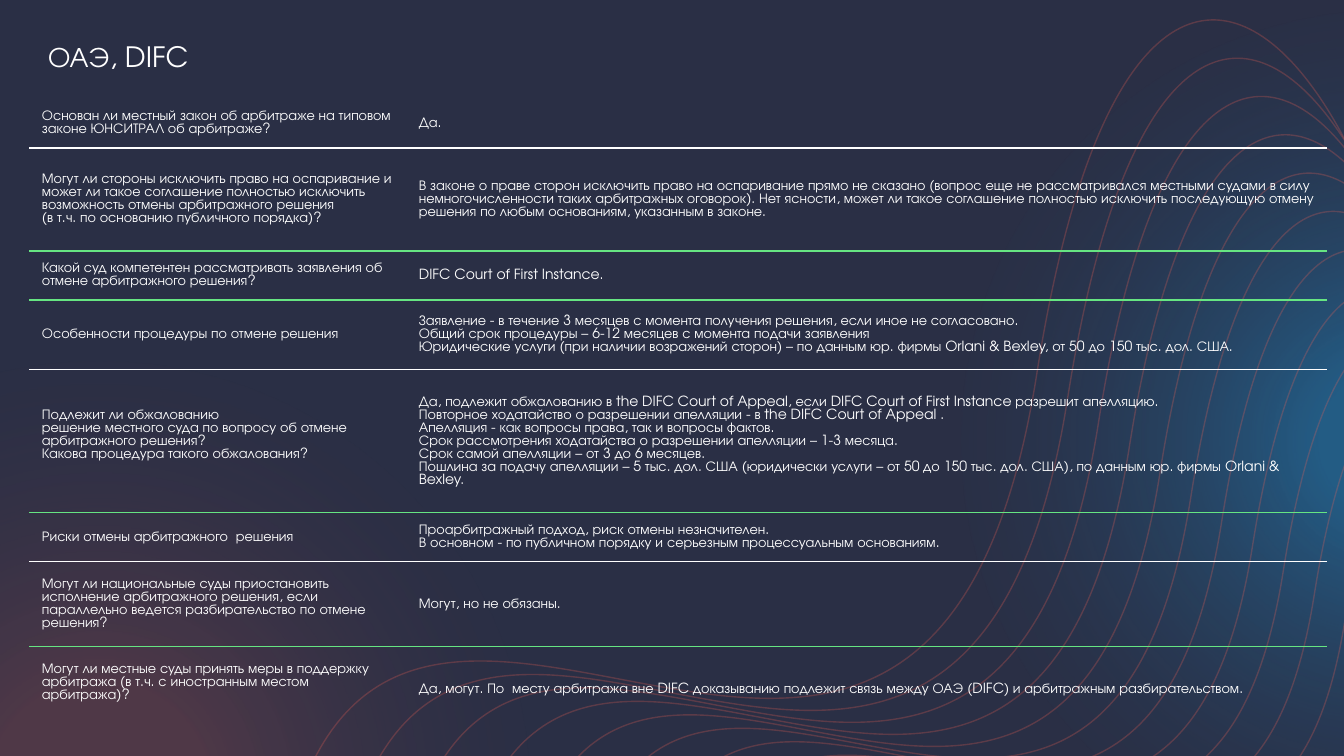
from dataclasses import dataclass

from lxml import etree
from pptx import Presentation
from pptx.dml.color import RGBColor
from pptx.enum.shapes import MSO_SHAPE
from pptx.enum.text import MSO_ANCHOR, PP_ALIGN
from pptx.oxml import parse_xml
from pptx.oxml.ns import nsdecls, qn
from pptx.slide import Slide
from pptx.util import Emu, Pt

ELLIPSE = MSO_SHAPE.OVAL
MIDDLE = MSO_ANCHOR.MIDDLE
LEFT = PP_ALIGN.LEFT

FONT = "TeX Gyre Adventor"
NAVY = RGBColor(0x2A, 0x2F, 0x45)
BLUE = RGBColor(0x1B, 0x94, 0xD5)
CORAL = RGBColor(0xFF, 0x64, 0x55)
GREEN = RGBColor(0x66, 0xE5, 0x82)
WHITE = RGBColor(0xFF, 0xFF, 0xFF)

WIDTH, HEIGHT = 1344, 756
EMU_PER_PX = 914400 / 100.8
NO_GRID_STYLE = "{2D5ABB26-0587-4C30-8999-92F81FD0307C}"

Point = tuple[float, float]


@dataclass
class Glow:
    left: int
    top: int
    color: RGBColor
    core: int  # percent of the radius in the full colour
    opacity: int  # percent


@dataclass
class Row:
    height: int
    question: list[str]
    answer: list[str]
    divider: RGBColor | None
    lift: int = 0  # extra bottom margin of the question


GLOW_SIZE = 860
GLOWS = [Glow(962, 11, BLUE, 12, 44), Glow(-331, 362, CORAL, 18, 17)]

# Closed outlines of four Bezier segments, blended from the inner to the outer
WAVE_COUNT = 17
INNER_WAVE: list[Point] = [
    (1530, 767), (1571, 512), (1686, 659), (1690, 887), (1693, 1115), (1637, 1243), (1464, 1226),
    (1387, 1218), (1200, 1090), (1248, 933), (1296, 777), (1490, 1022), (1530, 767)]
OUTER_WAVE: list[Point] = [
    (1037, 373), (1143, -298), (1450, 89), (1459, 689), (1468, 1290), (1318, 1627), (863, 1582),
    (659, 1560), (166, 1221), (294, 810), (422, 399), (932, 1044), (1037, 373)]

COLUMNS = [377, 921]
ROWS = [
    Row(49, ["Основан ли местный закон об арбитраже на типовом законе ЮНСИТРАЛ об арбитраже?"],
        ["Да."], WHITE),
    Row(103, ["Могут ли стороны исключить право на оспаривание и может ли такое соглашение "
              "полностью исключить возможность отмены арбитражного решения",
              "(в т.ч. по основанию публичного порядка)?"],
        ["В законе о праве сторон исключить право на оспаривание прямо не сказано (вопрос еще не "
         "рассматривался местными судами в силу немногочисленности таких арбитражных оговорок). "
         "Нет ясности, может ли такое соглашение полностью исключить последующую отмену решения "
         "по любым основаниям, указанным в законе."], GREEN),
    Row(49, ["Какой суд компетентен рассматривать заявления об отмене арбитражного решения?"],
        ["DIFC Court of First Instance."], GREEN),
    Row(70, ["Особенности процедуры по отмене решения"],
        ["Заявление - в течение 3 месяцев с момента получения решения, если иное не согласовано.",
         "Общий срок процедуры – 6-12 месяцев с момента подачи заявления",
         "Юридические услуги (при наличии возражений сторон) – по данным юр. фирмы "
         "Orlani & Bexley, от 50 до 150 тыс. дол. США."], WHITE),
    Row(143, ["Подлежит ли обжалованию",
              "решение местного суда по вопросу об отмене арбитражного решения?",
              "Какова процедура такого обжалования?"],
        ["Да, подлежит обжалованию в the DIFC Court of Appeal, если DIFC Court of First Instance "
         "разрешит апелляцию.",
         "Повторное ходатайство о разрешении апелляции - в the DIFC Court of Appeal .",
         "Апелляция - как вопросы права, так и вопросы фактов.",
         "Срок рассмотрения ходатайства о разрешении апелляции – 1-3 месяца.",
         "Срок самой апелляции – от 3 до 6 месяцев.",
         "Пошлина за подачу апелляции – 5 тыс. дол. США (юридически услуги – от 50 до 150 тыс. "
         "дол. США), по данным юр. фирмы Orlani & Bexley."], GREEN, lift=13),
    Row(49, ["Риски отмены арбитражного  решения"],
        ["Проарбитражный подход, риск отмены незначителен.",
         "В основном - по публичном порядку и серьезным процессуальным основаниям."], WHITE),
    Row(85, ["Могут ли национальные суды приостановить исполнение арбитражного решения, если "
             "параллельно ведется разбирательство по отмене решения?"],
        ["Могут, но не обязаны."], GREEN),
    Row(85, ["Могут ли местные суды принять меры в поддержку арбитража (в т.ч. с иностранным "
             "местом арбитража)?"],
        ["Да, могут. По  месту арбитража вне DIFC доказыванию подлежит связь между ОАЭ (DIFC) "
         "и арбитражным разбирательством."], None, lift=13),
]


def px(value: float) -> Emu:
    return Emu(round(value * EMU_PER_PX))


def add_glow(slide: Slide, glow: Glow) -> None:
    sp = slide.shapes.add_shape(ELLIPSE, px(glow.left), px(glow.top), px(GLOW_SIZE), px(GLOW_SIZE))
    sp.shadow.inherit = False
    sp.line.fill.background()
    sp.element.spPr.find(qn("a:prstGeom")).addnext(parse_xml(
        f'<a:gradFill {nsdecls("a")}><a:gsLst>'
        f'<a:gs pos="{glow.core * 1000}"><a:srgbClr val="{glow.color}">'
        f'<a:alpha val="{glow.opacity * 1000}"/></a:srgbClr></a:gs>'
        f'<a:gs pos="81000"><a:srgbClr val="{NAVY}"><a:alpha val="0"/></a:srgbClr></a:gs></a:gsLst>'
        '<a:path path="circle"><a:fillToRect l="50000" t="50000" r="50000" b="50000"/></a:path>'
        '</a:gradFill>'))


def bezier(a: Point, b: Point, c: Point, d: Point, t: float) -> Point:
    u = 1 - t
    weights = (u ** 3, 3 * u * u * t, 3 * u * t * t, t ** 3)
    x, y = (sum(w * p[axis] for w, p in zip(weights, (a, b, c, d))) for axis in (0, 1))
    return x, y


def is_on_slide(nodes: list[Point]) -> bool:
    points = [bezier(*nodes[i:i + 4], step / 20) for i in range(0, 12, 3) for step in range(20)]
    return any(0 <= x <= WIDTH and 0 <= y <= HEIGHT for x, y in points)


def add_wave(slide: Slide, nodes: list[Point]) -> None:
    outline = [(px(x), px(y)) for x, y in nodes]
    builder = slide.shapes.build_freeform(*outline[0])
    builder.add_line_segments(outline[1:], close=True)
    sp = builder.convert_to_shape()
    # Turn every three straight segments into one Bezier segment
    segments = list(sp.element.spPr.iter(qn("a:lnTo")))
    for i in range(0, len(segments), 3):
        curve = etree.Element(qn("a:cubicBezTo"))
        segments[i].addprevious(curve)
        for segment in segments[i:i + 3]:
            curve.append(segment[0])
            segment.getparent().remove(segment)
    sp.shadow.inherit = False
    sp.fill.background()
    sp.line.color.rgb = CORAL
    sp.line.width = Pt(1)
    color = sp.element.spPr.find(".//" + qn("a:srgbClr"))
    etree.SubElement(color, qn("a:alpha")).set("val", "23000")


def format_text(tf, size: float, spacing: Pt | None = None) -> None:
    for p in tf.paragraphs:
        p.alignment = LEFT
        if spacing is not None:
            p.line_spacing = spacing
        for r in p.runs:
            r.font.name = FONT
            r.font.size = Pt(size)
            r.font.color.rgb = WHITE


def add_title(slide: Slide, text: str) -> None:
    title = slide.shapes.title
    title.left, title.top, title.width, title.height = px(38), px(34), px(176), px(44)
    tf = title.text_frame
    tf.text = text
    tf.word_wrap = False
    tf.vertical_anchor = MIDDLE
    format_text(tf, 20)


def fill_cell(cell, lines: list[str], divider: RGBColor | None, lift: int) -> None:
    cell.margin_left = cell.margin_right = px(13)
    cell.margin_top, cell.margin_bottom = px(7), px(7 + lift)
    cell.vertical_anchor = MIDDLE
    cell.fill.background()
    if divider is not None:
        cell._tc.get_or_add_tcPr().insert(0, parse_xml(
            f'<a:lnB {nsdecls("a")} w="12700"><a:solidFill><a:srgbClr val="{divider}"/>'
            '</a:solidFill></a:lnB>'))
    cell.text_frame.text = "\n".join(lines)
    format_text(cell.text_frame, 10, Pt(9.3))


def add_questions(slide: Slide) -> None:
    frame = slide.shapes.add_table(len(ROWS), len(COLUMNS), px(29), px(99), px(sum(COLUMNS)),
                                   px(sum(row.height for row in ROWS)))
    frame.element.find(".//" + qn("a:tableStyleId")).text = NO_GRID_STYLE
    table = frame.table
    table.first_row = table.horz_banding = False
    for column, width in zip(table.columns, COLUMNS):
        column.width = px(width)
    for i, row in enumerate(ROWS):
        table.rows[i].height = px(row.height)
        fill_cell(table.cell(i, 0), row.question, row.divider, row.lift)
        fill_cell(table.cell(i, 1), row.answer, row.divider, 0)


def main() -> None:
    prs = Presentation()
    prs.slide_width, prs.slide_height = px(WIDTH), px(HEIGHT)
    slide = prs.slides.add_slide(prs.slide_layouts[5])

    # Background
    slide.background.fill.solid()
    slide.background.fill.fore_color.rgb = NAVY
    for glow in GLOWS:
        add_glow(slide, glow)
    for i in range(WAVE_COUNT):
        blend = i / (WAVE_COUNT - 1)
        nodes = [(x0 + (x1 - x0) * blend, y0 + (y1 - y0) * blend)
                 for (x0, y0), (x1, y1) in zip(INNER_WAVE, OUTER_WAVE)]
        if is_on_slide(nodes):
            add_wave(slide, nodes)

    # Content
    add_title(slide, "ОАЭ, DIFC")
    add_questions(slide)
    prs.save("out.pptx")


if __name__ == "__main__":
    main()
